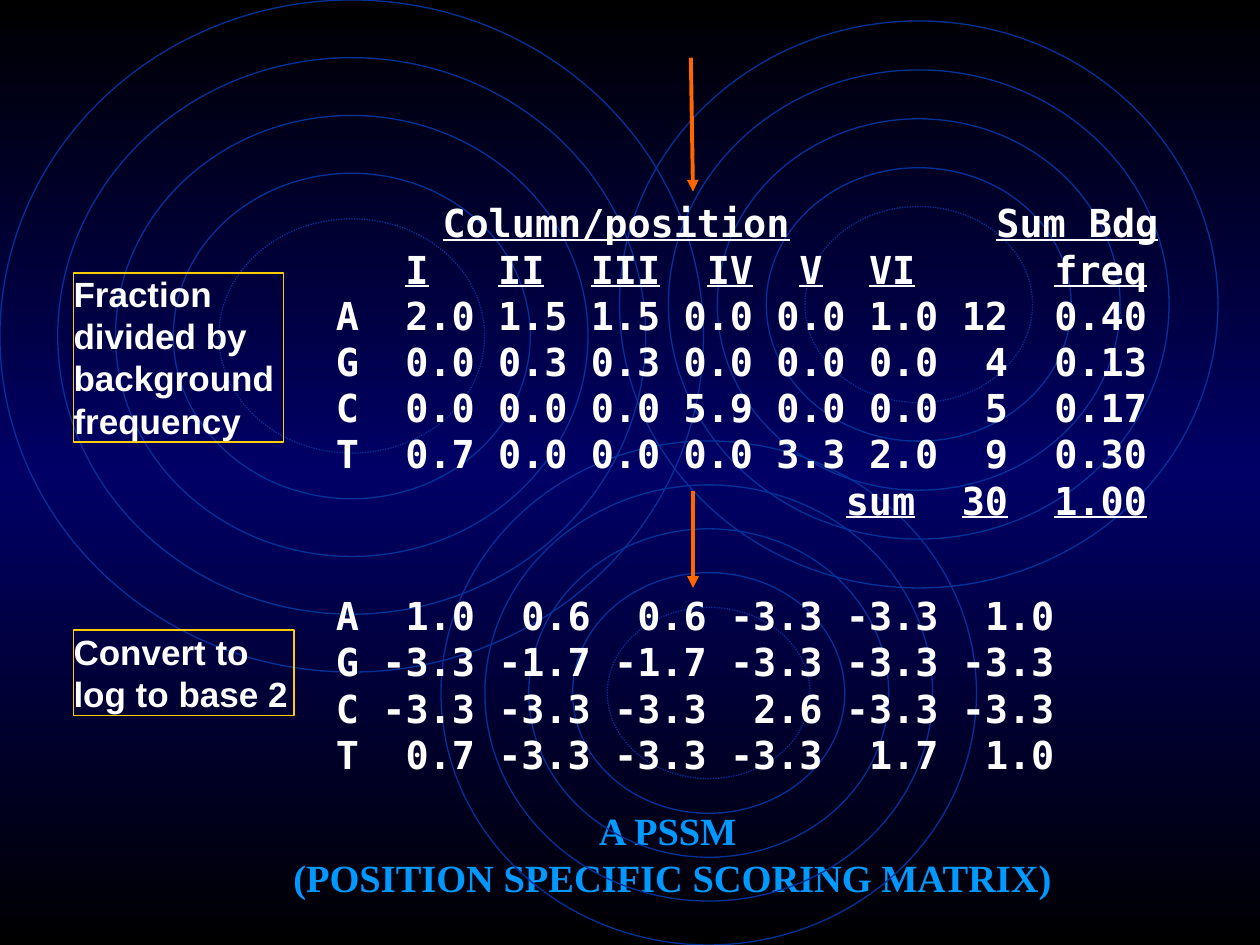
from copy import deepcopy
from pptx import Presentation
from pptx.dml.color import RGBColor
from pptx.enum.dml import MSO_LINE_DASH_STYLE as Dash
from pptx.enum.shapes import MSO_CONNECTOR as Connector, MSO_SHAPE as Shape
from pptx.enum.text import MSO_ANCHOR as Anchor, MSO_AUTO_SIZE as AutoSize, PP_ALIGN as Align
from pptx.oxml.ns import qn
from pptx.util import Inches, Pt
from lxml.etree import SubElement

THEME = {
    "background": [(0, "000000"), (0.5, "000066"), (1, "000000")],
    "ring": "003399", "arrow": "FF6600", "frame": "FFCC00",
    "matrix": {"name": "DejaVu Sans Mono", "size": 22, "color": "FFFFFF", "spacing": 26.4},
    "label": {"name": "Arial", "size": 20, "color": "FFFFFF", "spacing": 24},
    "title": {"name": "Times New Roman", "size": 22, "color": "0099FF", "spacing": 26.4},
}

presentation = Presentation()
presentation.slide_width, presentation.slide_height = Inches(10), Inches(7.5)
slide = presentation.slides.add_slide(presentation.slide_layouts[5])
CELL = presentation.slide_width / 120
CHARACTER = Pt(22) * 0.602


def grid(*cells):
    return [round(cell * CELL) for cell in cells]


def write(shape, lines, style, tabs=(), align=Align.LEFT):
    frame = shape.text_frame
    settings = {"word_wrap": True, "auto_size": AutoSize.NONE, "vertical_anchor": Anchor.TOP,
                "margin_left": 0, "margin_right": 0, "margin_top": 0, "margin_bottom": 0}
    for name, value in settings.items():
        setattr(frame, name, value)
    for index, line in enumerate(lines):
        paragraph = frame.paragraphs[0] if index == 0 else frame.add_paragraph()
        paragraph.alignment = align
        paragraph.line_spacing = Pt(style["spacing"])
        if tabs:
            tab_list = SubElement(paragraph._p.get_or_add_pPr(), qn("a:tabLst"))
            for column, side in tabs[index]:
                SubElement(tab_list, qn("a:tab"), pos=str(round(column * CHARACTER)), algn=side)
        for text, underline in line:
            run = paragraph.add_run()
            run.text = text
            font_format = {"name": style["name"], "size": Pt(style["size"]),
                           "bold": True, "underline": underline}
            for name, value in font_format.items():
                setattr(run.font, name, value)
            run.font.color.rgb = RGBColor.from_string(style["color"])


fill = slide.background.fill
fill.gradient()
fill.gradient_angle = 270
stop_list = slide.element.xpath(".//a:gsLst")[0]
stop_list.append(deepcopy(stop_list[0]))
for stop, (position, color) in zip(fill.gradient_stops, THEME["background"]):
    stop.position = position
    stop.color.rgb = RGBColor.from_string(color)

RING_CLUSTERS = [(0, 0, 67, 64, 5.5), (42, 42, 51, 48, 4.18), (59, 2, 57, 54, 4.66)]
for left, top, width, height, step in RING_CLUSTERS:
    for level in (0, 1, 2, 3, 3.79):
        inset = level * step
        ring = slide.shapes.add_shape(Shape.OVAL, *grid(
            left + inset, top + inset, width - 2 * inset, height - 2 * inset))
        ring.shadow.inherit = False
        ring.fill.background()
        ring.line.color.rgb = RGBColor.from_string(THEME["ring"])
        ring.line.width = Pt(0.75)
        if level > 3:
            ring.line.dash_style = Dash.ROUND_DOT

value_tabs = [(column, "l") for column in range(3, 27, 4)] + [(29, "r"), (31, "l")]
fraction_rows = [
    "A 2.0 1.5 1.5 0.0 0.0 1.0 12 0.40",
    "G 0.0 0.3 0.3 0.0 0.0 0.0 4 0.13",
    "C 0.0 0.0 0.0 5.9 0.0 0.0 5 0.17",
    "T 0.7 0.0 0.0 0.0 3.3 2.0 9 0.30",
]
fraction_lines = [
    [("\t", False), ("Column/position\tSum Bdg\t", True)],
    [("\t", False), ("I\tII\tIII\tIV\tV\tVI", True), ("\t", False), ("freq", True)],
    *[[("\t".join(row.split()), False)] for row in fraction_rows],
    [("\t", False), ("sum\t30\t1.00", True)],
]
fraction_tabs = [
    [(4.6, "l"), (28.5, "l"), (37.5, "l")],
    [(column, "l") for column in (3, 7, 11, 16, 20, 23, 31)],
    *[value_tabs] * len(fraction_rows),
    [(22, "l"), (29, "r"), (31, "l")],
]
fraction_matrix = slide.shapes.add_textbox(*grid(32, 19, 84, 31))
write(fraction_matrix, fraction_lines, THEME["matrix"], fraction_tabs)

log_rows = [
    "A 1.0 0.6 0.6 -3.3 -3.3 1.0",
    "G -3.3 -1.7 -1.7 -3.3 -3.3 -3.3",
    "C -3.3 -3.3 -3.3 2.6 -3.3 -3.3",
    "T 0.7 -3.3 -3.3 -3.3 1.7 1.0",
]
log_lines = [[("\t".join(row.split()), False)] for row in log_rows]
log_tabs = [[(column, "r") for column in range(6, 32, 5)]] * len(log_rows)
log_matrix = slide.shapes.add_textbox(*grid(32, 56.4, 71, 17.6))
write(log_matrix, log_lines, THEME["matrix"], log_tabs)

for ends in [(65.8, 5.5, 66, 18.25), (66, 46.8, 66, 56)]:
    arrow = slide.shapes.add_connector(Connector.STRAIGHT, *grid(*ends))
    arrow.line.color.rgb = RGBColor.from_string(THEME["arrow"])
    arrow.line.width = Pt(2.25)
    SubElement(arrow.line._get_or_add_ln(), qn("a:tailEnd"), type="triangle")
    SubElement(arrow._element.spPr, qn("a:effectLst"))

STEP_LABELS = [
    ("Fraction divided by background frequency", (7, 26, 20, 16.1)),
    ("Convert to log to base 2", (7, 60, 21, 8.15)),
]
for text, place in STEP_LABELS:
    label = slide.shapes.add_shape(Shape.RECTANGLE, *grid(*place))
    label.shadow.inherit = False
    label.fill.background()
    label.line.color.rgb = RGBColor.from_string(THEME["frame"])
    label.line.width = Pt(0.75)
    write(label, [[(text, False)]], THEME["label"])

title = slide.shapes.title
title.left, title.top, title.width, title.height = grid(18.7, 76.9, 90.7, 8.9)
title_lines = [[("A PSSM ", False)], [("(POSITION SPECIFIC SCORING MATRIX)", False)]]
write(title, title_lines, THEME["title"], align=Align.CENTER)

presentation.save("out.pptx")
